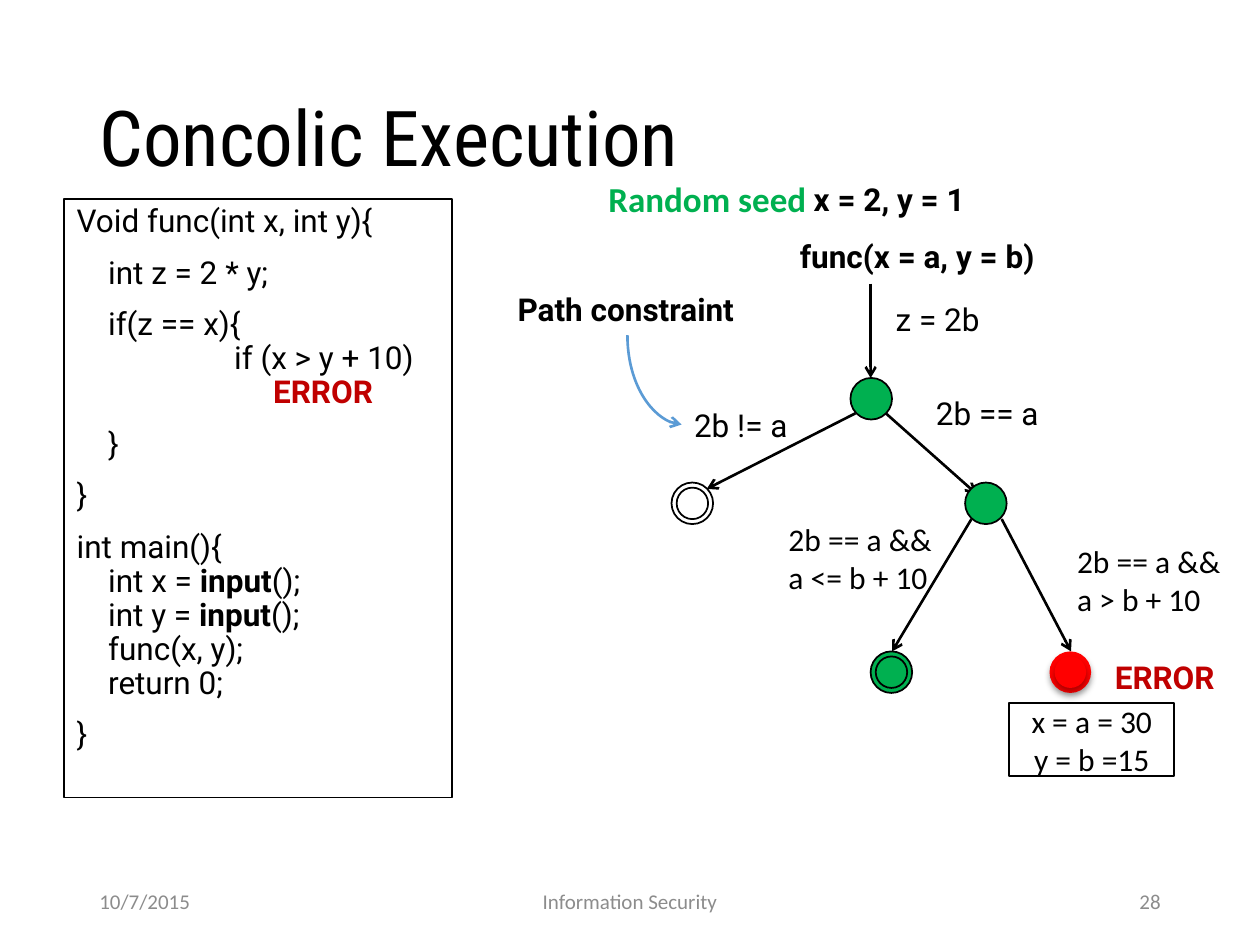
import pptx
import pptx.util
import pptx.dml.color
import pptx.enum.shapes
import pptx.enum.text
import pptx.oxml
import pptx.oxml.ns
from lxml import etree

Inches, Pt = pptx.util.Inches, pptx.util.Pt
SHAPE = pptx.enum.shapes.MSO_SHAPE
CONNECTOR = pptx.enum.shapes.MSO_CONNECTOR
ALIGN = pptx.enum.text.PP_ALIGN
ANCHOR = pptx.enum.text.MSO_ANCHOR
qn = pptx.oxml.ns.qn

BLACK, WHITE, GREY = "000000", "FFFFFF", "8C8C8C"
GREEN, RED, DARK_RED, BLUE = "00B050", "FF0000", "C00000", "5B9BD5"
NODE, RING = 0.33, 0.04


def rgb(value):
    return pptx.dml.color.RGBColor.from_string(value)


def style_run(r, size=18, font="Roboto", color=BLACK, bold=False):
    r.font.size, r.font.name, r.font.bold = Pt(size), font, bold
    r.font.color.rgb = rgb(color)


def write(tf, text, align=ALIGN.LEFT, **style):
    tf.text = text
    for p in tf.paragraphs:
        p.alignment = align
        for r in p.runs:
            style_run(r, **style)


def paint(shape, fill, line=BLACK):
    shape.shadow.inherit = False
    shape.fill.solid()
    shape.fill.fore_color.rgb = rgb(fill)
    if line:
        shape.line.color.rgb = rgb(line)
        shape.line.width = Pt(1)
    else:
        shape.line.fill.background()


def add_label(s, left, top, width, height, text, wrap=False, **style):
    tb = s.shapes.add_textbox(Inches(left), Inches(top), Inches(width), Inches(height))
    write(tb.text_frame, text, **style)
    tb.text_frame.word_wrap = wrap
    return tb


def add_arrow(s, x1, y1, x2, y2, color=BLACK, kind=CONNECTOR.STRAIGHT):
    c = s.shapes.add_connector(kind, Inches(x1), Inches(y1), Inches(x2), Inches(y2))
    c.line.color.rgb = rgb(color)
    c.line.width = Pt(1.5)
    etree.SubElement(c.line._get_or_add_ln(), qn("a:tailEnd"), type="arrow")
    etree.SubElement(c._element.spPr, qn("a:effectLst"))
    return c


def add_soft_shadow(shape):
    effects = shape._element.spPr.find(qn("a:effectLst"))
    shadow = etree.SubElement(effects, qn("a:outerShdw"), blurRad=str(Pt(3.5)),
                              dist=str(Pt(2.2)), dir="5400000", rotWithShape="0")
    color = etree.SubElement(shadow, qn("a:srgbClr"), val=BLACK)
    etree.SubElement(color, qn("a:alpha"), val="32000")


def add_node(s, left, top, fill, final=False, line=BLACK):
    """A tree node; a final node has a second circle inside."""
    shapes = s.shapes.add_group_shape().shapes if final else s.shapes
    for inset in (0, RING) if final else (0,):
        size = Inches(NODE - 2 * inset)
        circle = shapes.add_shape(SHAPE.FLOWCHART_CONNECTOR, Inches(left + inset),
                                  Inches(top + inset), size, size)
        paint(circle, fill, line)
        if not line:
            add_soft_shadow(circle)


def add_title(s, left, top, width, height):
    title = s.shapes.title
    title.left, title.top = Inches(left), Inches(top)
    title.width, title.height = Inches(width), Inches(height)
    write(title.text_frame, "Concolic Execution", size=44, font="Roboto Condensed")
    title.text_frame.vertical_anchor = ANCHOR.MIDDLE
    title.text_frame.paragraphs[0].line_spacing = 0.9


def add_code(s, left, top, width, height):
    box = s.shapes.add_shape(SHAPE.RECTANGLE, Inches(left), Inches(top),
                             Inches(width), Inches(height))
    paint(box, WHITE)
    tf = box.text_frame
    tf.word_wrap, tf.vertical_anchor = True, ANCHOR.TOP
    # Indent in inches, space before in points, (text, bold, colour) runs
    lines = [
        (0, 0, [("Void func(int x, int y){",)]),
        (0.25, 10, [("int z = 2 * y;",)]),
        (0.25, 10, [("if(z == x){",)]),
        (1.25, 0, [("if (x > y + 10)",)]),
        (1.56, 0, [("ERROR", True, DARK_RED)]),
        (0.25, 10, [("}",)]),
        (0, 10, [("}",)]),
        (0, 10, [("int main(){",)]),
        (0.25, 0, [("int x = ",), ("input", True), ("();",)]),
        (0.25, 0, [("int y = ",), ("input", True), ("();",)]),
        (0.25, 0, [("func(x, y);",)]),
        (0.25, 0, [("return 0;",)]),
        (0, 10, [("}",)]),
    ]
    for i, (indent, before, runs) in enumerate(lines):
        p = tf.add_paragraph() if i else tf.paragraphs[0]
        p.alignment, p.line_spacing, p.space_before = ALIGN.LEFT, 0.9, Pt(before)
        p._p.get_or_add_pPr().set("marL", str(Inches(indent)))
        for text, bold, color in (run + (False, BLACK)[len(run) - 1:] for run in runs):
            r = p.add_run()
            r.text = text
            style_run(r, bold=bold, color=color)


def add_tree(s, left, top):
    """The execution tree, placed from its top left corner."""
    # Edges
    for x1, y1, x2, y2 in [(2.91, 1.25, 2.91, 2), (2.79, 2.28, 1.61, 2.88),
                           (3.03, 2.28, 3.75, 2.92), (3.71, 3.12, 3.08, 4.17),
                           (3.95, 3.12, 4.5, 4.17)]:
        add_arrow(s, left + x1, top + y1, left + x2, top + y2)

    # Curved pointer, turned a quarter so that it leaves downwards
    pointer = add_arrow(s, left + 1.55, top + 1.8, left + 0.84, top + 2.23,
                        BLUE, CONNECTOR.CURVE)
    pointer._element.spPr.find(qn("a:xfrm")).set("rot", "16200000")
    pointer._element.spPr.find(qn("a:prstGeom")).set("prst", "curvedConnector2")

    # Nodes
    add_node(s, left + 2.75, top + 2, GREEN)
    add_node(s, left + 3.66, top + 2.83, GREEN)
    add_node(s, left + 1.33, top + 2.83, WHITE, final=True)
    add_node(s, left + 2.91, top + 4.17, GREEN, final=True)
    add_node(s, left + 4.33, top + 4.17, RED, final=True, line=None)

    # Labels
    calibri, bold = {"font": "Calibri"}, {"bold": True}
    for x, y, w, h, text, style in [
        (0.73, 0.36, 1.79, 0.44, "Random seed",
         {"size": 20, "font": "Calibri", "color": GREEN, "bold": True}),
        (2.36, 0.38, 1.41, 0.4, "x = 2, y = 1", bold),
        (2.25, 0.83, 2.08, 0.4, "func(x = a, y = b)", bold),
        (0.01, 1.25, 1.94, 0.4, "Path constraint", bold),
        (3.01, 1.33, 0.88, 0.4, "z = 2b", {}),
        (1.41, 2.17, 0.95, 0.4, "2b != a", {}),
        (3.33, 2.08, 1.25, 0.4, "2b == a", {"wrap": True}),
        (2.16, 3.08, 1.4, 0.71, "2b == a &&\na <= b + 10", calibri),
        (4.45, 3.25, 1.4, 0.71, "2b == a &&\na > b + 10", calibri),
        (4.75, 4.17, 1, 0.4, "ERROR", {"color": DARK_RED, "bold": True}),
    ]:
        add_label(s, left + x, top + y, w, h, text, **style)

    # Values that reach the error
    box = s.shapes.add_shape(SHAPE.RECTANGLE, Inches(left + 4.01), Inches(top + 4.58),
                             Inches(1.31), Inches(0.58))
    paint(box, WHITE)
    write(box.text_frame, "x = a = 30\ny = b =15", ALIGN.CENTER, font="Calibri")
    box.text_frame.vertical_anchor = ANCHOR.MIDDLE


def add_footer(s, top, height):
    for left, width, text, align in [(0.69, 2.25, "10/7/2015", ALIGN.LEFT),
                                     (3.31, 3.38, "Information Security", ALIGN.CENTER),
                                     (7.06, 2.25, "28", ALIGN.RIGHT)]:
        tb = add_label(s, left, top, width, height, text, wrap=True, align=align,
                       size=12, font="Calibri", color=GREY)
        tb.text_frame.vertical_anchor = ANCHOR.MIDDLE


def main():
    prs = pptx.Presentation()
    prs.slide_width, prs.slide_height = Inches(10), Inches(7.5)
    s = prs.slides.add_slide(prs.slide_layouts[5])
    add_title(s, 0.69, 0.4, 8.62, 1.45)
    add_code(s, 0.51, 1.58, 3.08, 4.75)
    add_tree(s, 4, 1)
    add_footer(s, 6.95, 0.4)
    prs.save("out.pptx")


if __name__ == "__main__":
    main()
